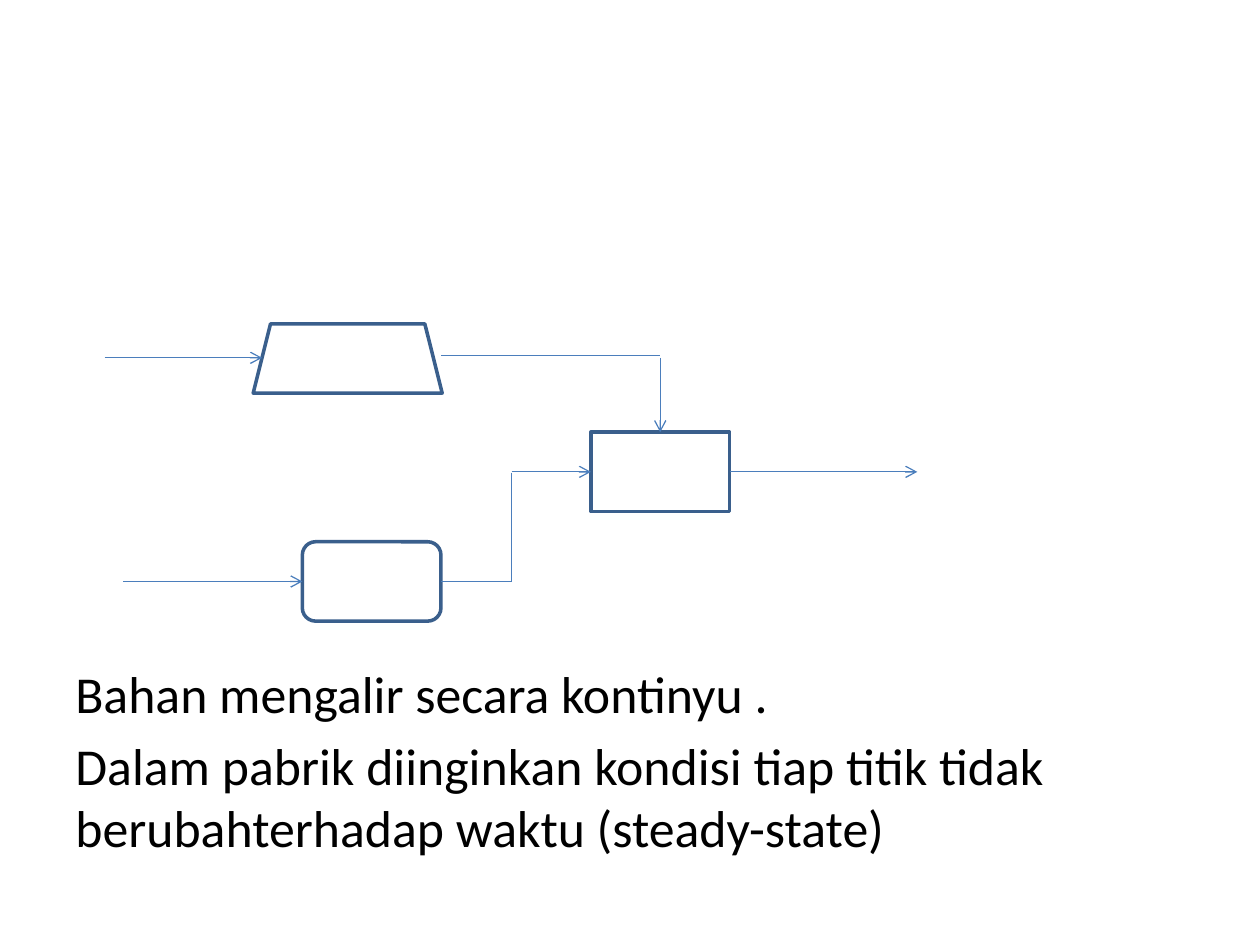
from pptx import Presentation
from pptx.util import Inches, Pt
from pptx.dml.color import RGBColor
from pptx.enum.shapes import MSO_SHAPE as Shape, MSO_CONNECTOR as Link
from lxml.etree import SubElement as sub
from pptx.oxml.ns import qn


def hue(code):
    return RGBColor.from_string(code)


def write(frame, text, size=29.6, font="Calibri", color="000000", gap=0, first=False):
    para = frame.paragraphs[0] if first else frame.add_paragraph()
    if gap:
        para.space_before = Pt(gap)
    run = para.add_run()
    run.text = text
    run.font.size = Pt(size)
    run.font.name = font
    run.font.color.rgb = hue(color)


deck = Presentation()
deck.slide_width, deck.slide_height = Inches(10), Inches(7.5)
slide = deck.slides.add_slide(deck.slide_layouts[6])

body = slide.shapes.add_textbox(Inches(0.5), Inches(5.2), Inches(9), Inches(1.7)).text_frame
body.word_wrap = True
write(body, "Bahan mengalir secara kontinyu .", first=True)
write(body, "Dalam pabrik diinginkan kondisi tiap titik tidak berubahterhadap waktu (steady-state)", gap=5.9)

units = {}
for key, kind, *area in [
    ("feeder", Shape.TRAPEZOID, 2.01, 2.57, 1.5, 0.55),
    ("tank", Shape.ROUNDED_RECTANGLE, 2.4, 4.3, 1.1, 0.63),
    ("mixer", Shape.RECTANGLE, 4.69, 3.43, 1.1, 0.63),
]:
    unit = slide.shapes.add_shape(kind, *map(Inches, area))
    unit.shadow.inherit = False
    unit.fill.solid()
    unit.fill.fore_color.rgb = hue("FFFFFF")
    unit.line.color.rgb = hue("3A5F8C")
    unit.line.width = Pt(2)
    units[key] = unit

for start, end, arrow, source, target in [
    ((0.83, 2.84), (2.08, 2.84), True, None, None),
    ((3.5, 2.82), (5.24, 2.82), False, None, None),
    ((5.24, 2.84), (5.24, 3.43), True, None, ("mixer", 0)),
    ((0.98, 4.62), (2.4, 4.62), True, None, ("tank", 1)),
    ((3.5, 4.62), (4.06, 4.62), False, ("tank", 3), None),
    ((4.06, 3.75), (4.06, 4.62), False, None, None),
    ((4.06, 3.75), (4.69, 3.75), True, None, ("mixer", 1)),
    ((5.79, 3.75), (7.28, 3.75), True, ("mixer", 3), None),
]:
    flow = slide.shapes.add_connector(Link.STRAIGHT, *map(Inches, start + end))
    if source:
        flow.begin_connect(units[source[0]], source[1])
        flow.end_y = flow.begin_y
    if target:
        flow.end_connect(units[target[0]], target[1])
        if target[1] == 1:
            flow.begin_y = flow.end_y
    flow.line.color.rgb = hue("4B7EBC")
    flow.line.width = Pt(0.75)
    props = flow._element.spPr
    if arrow:
        sub(props.find(qn("a:ln")), qn("a:tailEnd"), type="arrow")
    sub(props, qn("a:effectLst"))

deck.save("out.pptx")
